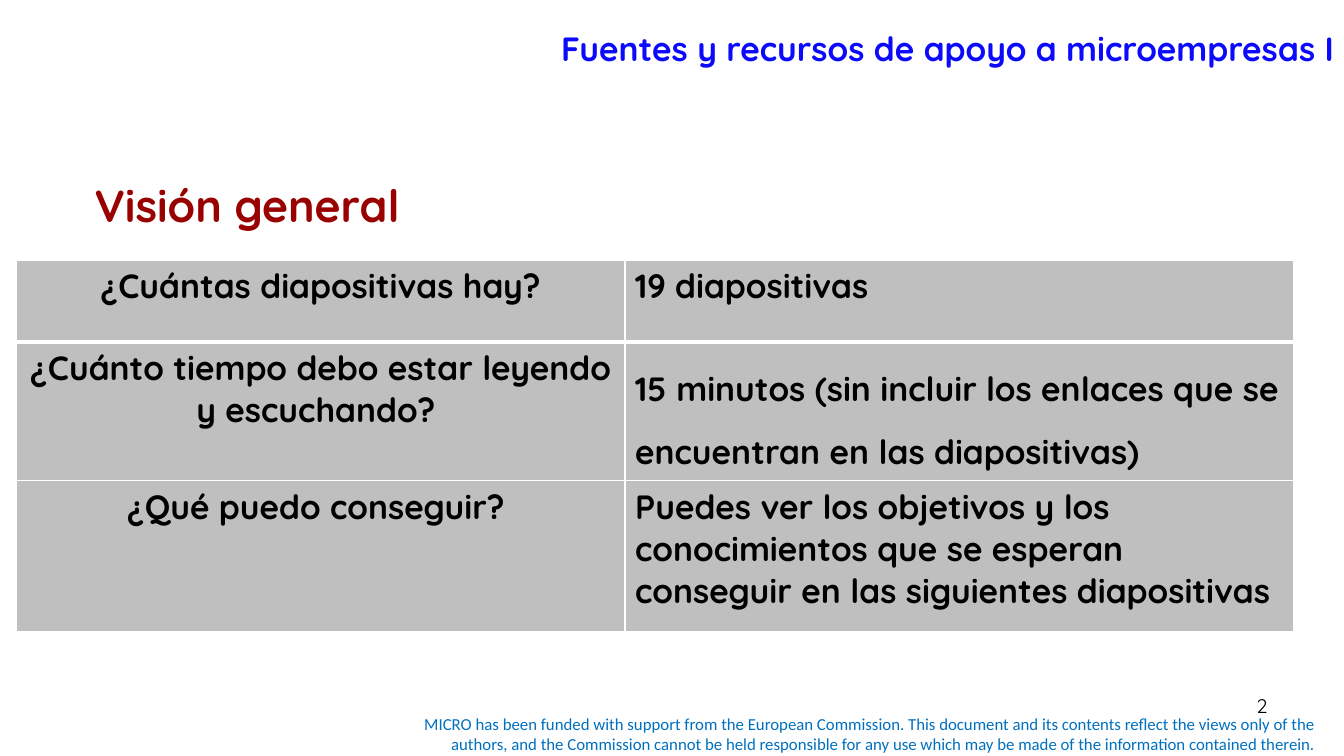
from lxml import etree
from pptx import Presentation
from pptx.dml.color import RGBColor
from pptx.enum.text import MSO_ANCHOR, PP_ALIGN
from pptx.oxml.ns import qn
from pptx.util import Inches, Pt

LEFT, CENTER, RIGHT = PP_ALIGN.LEFT, PP_ALIGN.CENTER, PP_ALIGN.RIGHT
TOP, MIDDLE = MSO_ANCHOR.TOP, MSO_ANCHOR.MIDDLE
HEADING_FONT, FOOTER_FONT = "Quicksand", "Calibri"
COLORS = {
    "title": "0B0AFD",
    "section": "990000",
    "text": "000000",
    "cell": "BFBFBF",
    "border": "FFFFFF",
    "funding": "0070C0",
}
COLUMN_WIDTHS = (6.04, 6.63)
ROW_HEIGHTS = (0.81, 1.38, 1.5)
OVERVIEW = (
    ("¿Cuántas diapositivas hay?", "19 diapositivas", 1.0),
    ("¿Cuánto tiempo debo estar leyendo y escuchando? ",
     "15 minutos (sin incluir los enlaces que se encuentran en las diapositivas)", 1.5),
    ("¿Qué puedo conseguir? ",
     "Puedes ver los objetivos y los conocimientos que se esperan conseguir "
     "en las siguientes diapositivas", 1.0),
)
FUNDING = (
    "MICRO has been funded with support from the European Commission. This document "
    "and its contents reflect the views only of the authors, and the Commission cannot "
    "be held responsible for any use which may be made of the information contained therein."
)


def write(frame, text, size, color, align=LEFT, bold=False, font=HEADING_FONT, spacing=1.0):
    """Write one formatted paragraph into a text frame."""
    frame.word_wrap = True
    paragraph = frame.paragraphs[0]
    paragraph.alignment = align
    paragraph.line_spacing = spacing
    run = paragraph.add_run()
    run.text = text
    run.font.name = font
    run.font.size = Pt(size)
    run.font.bold = bold
    run.font.color.rgb = RGBColor.from_string(COLORS[color])


def add_label(slide, box, text, size, color, anchor=TOP, **style):
    """Add a text box with one paragraph."""
    frame = slide.shapes.add_textbox(*map(Inches, box)).text_frame
    frame.vertical_anchor = anchor
    write(frame, text, size, color, **style)


def add_title(slide, box, text):
    """Place the title placeholder and fill it."""
    title = slide.shapes.title
    title.left, title.top, title.width, title.height = map(Inches, box)
    title.text_frame.vertical_anchor = MIDDLE
    write(title.text_frame, text, 24, "title", align=RIGHT, bold=True)


def set_borders(cell, top, bottom):
    """Draw the four cell borders, with widths in points above and below."""
    properties = cell._tc.get_or_add_tcPr()
    for side, width in (("L", 1), ("R", 1), ("T", top), ("B", bottom)):
        line = etree.SubElement(properties, qn(f"a:ln{side}"), w=str(Pt(width)))
        fill = etree.SubElement(line, qn("a:solidFill"))
        etree.SubElement(fill, qn("a:srgbClr"), val=COLORS["border"])


def add_overview(slide, left, top):
    """Add the table of questions and answers."""
    size = sum(COLUMN_WIDTHS), sum(ROW_HEIGHTS)
    table = slide.shapes.add_table(
        len(OVERVIEW), len(COLUMN_WIDTHS), *map(Inches, (left, top, *size))).table
    for column, width in zip(table.columns, COLUMN_WIDTHS):
        column.width = Inches(width)
    for index, (question, answer, spacing) in enumerate(OVERVIEW):
        table.rows[index].height = Inches(ROW_HEIGHTS[index])
        entries = ((question, CENTER, 1.0), (answer, LEFT, spacing))
        for cell, (text, align, leading) in zip(table.rows[index].cells, entries):
            set_borders(cell, top=3 if index == 1 else 1, bottom=3 if index == 0 else 1)
            cell.fill.solid()
            cell.fill.fore_color.rgb = RGBColor.from_string(COLORS["cell"])
            write(cell.text_frame, text, 24, "text", align=align, bold=True, spacing=leading)


def main():
    """Build the overview slide and save it."""
    deck = Presentation()
    deck.slide_width, deck.slide_height = Inches(13.33), Inches(7.5)
    slide = deck.slides.add_slide(deck.slide_layouts[5])
    add_label(slide, (3.75, 7.03, 9.4, 0.5), FUNDING, 12, "funding",
              anchor=MIDDLE, align=RIGHT, font=FOOTER_FONT)
    add_overview(slide, 0.16, 2.58)
    add_label(slide, (9.56, 6.83, 3.11, 0.52), "2", 14, "text", align=RIGHT)
    add_label(slide, (0.84, 1.71, 4.64, 0.64), "Visión general", 32, "section", bold=True)
    add_title(slide, (1.33, 0.21, 12, 0.53), "Fuentes y recursos de apoyo a microempresas I")
    deck.save("out.pptx")


if __name__ == "__main__":
    main()
